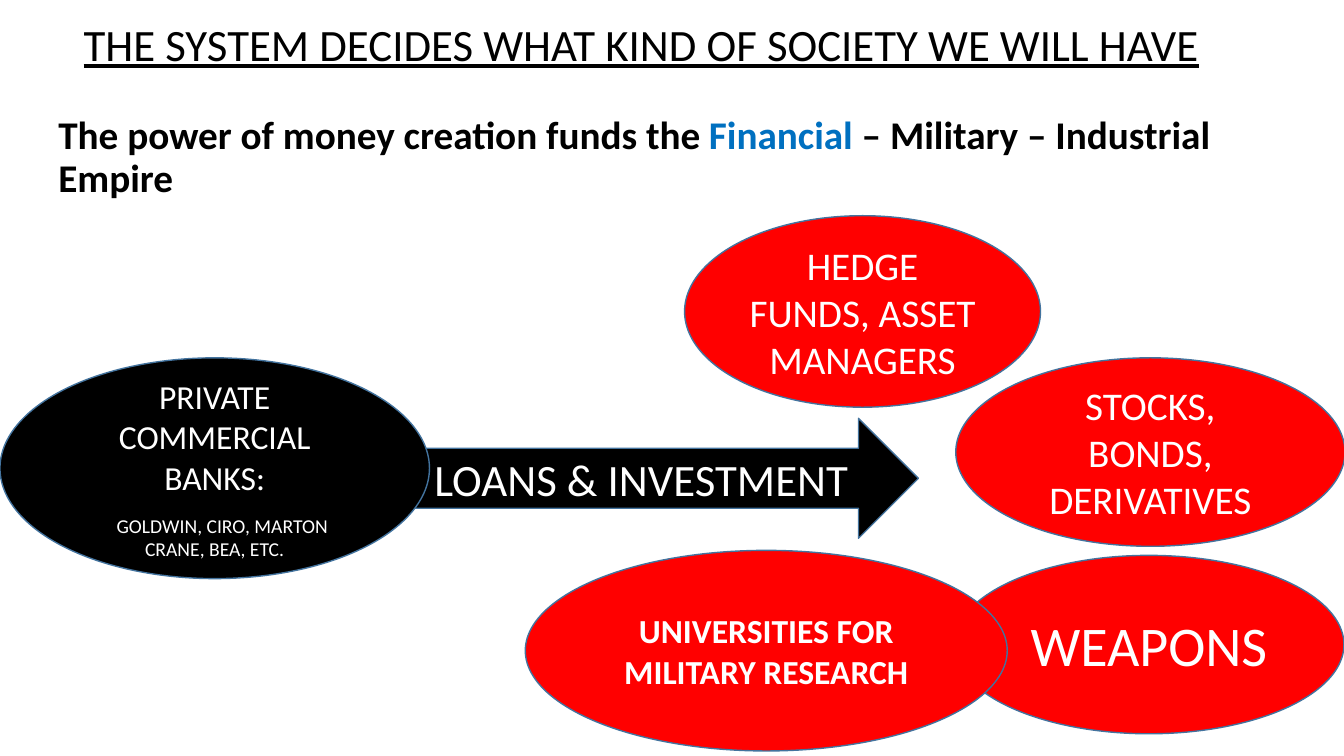
"""Build the slide on how money creation funds the financial-military-industrial empire."""
import pptx
import pptx.dml.color
import pptx.enum.shapes
import pptx.enum.text
import pptx.util

Inches = pptx.util.Inches
Pt = pptx.util.Pt
Shape = pptx.enum.shapes.MSO_SHAPE
Anchor = pptx.enum.text.MSO_ANCHOR
Align = pptx.enum.text.PP_ALIGN


def color(hex_string):
    return pptx.dml.color.RGBColor.from_string(hex_string)


def style(para, size, hex_string, bold=False):
    para.font.name = "Calibri"
    para.font.size = Pt(size)
    para.font.bold = bold
    para.font.color.rgb = color(hex_string)


deck = pptx.Presentation()
deck.slide_width = Inches(13.33)
deck.slide_height = Inches(7.5)
slide = deck.slides.add_slide(deck.slide_layouts[6])

title = slide.shapes.add_textbox(Inches(0.73), Inches(0.12), Inches(11.28), Inches(0.64))
title.text_frame.word_wrap = False
para = title.text_frame.paragraphs[0]
para.text = "THE SYSTEM DECIDES WHAT KIND OF SOCIETY WE WILL HAVE"
style(para, 32, "000000")
para.font.underline = True

subtitle = slide.shapes.add_textbox(Inches(0.48), Inches(1.1), Inches(12.55), Inches(0.64))
subtitle.text_frame.word_wrap = True
para = subtitle.text_frame.paragraphs[0]
para.line_spacing = 0.9
style(para, 28, "000000", bold=True)
for text, tint in [
    ("The power of money creation funds the ", "000000"),
    ("Financial", "0070C0"),
    (" – Military – Industrial Empire", "000000"),
]:
    span = para.add_run()
    span.text = text
    span.font.color.rgb = color(tint)

RED, BLACK = "FF0000", "000000"
nodes = [
    (Shape.OVAL, 6.79, 2.14, 3.53, 1.9, RED, 28, False, ["HEDGE FUNDS, ASSET MANAGERS"]),
    (Shape.OVAL, 9.48, 3.55, 3.86, 1.87, RED, 28, False, ["STOCKS, BONDS, DERIVATIVES"]),
    (Shape.OVAL, 9.46, 5.51, 3.87, 1.77, RED, 40, False, ["WEAPONS"]),
    (Shape.OVAL, 5.21, 5.46, 4.78, 1.99, RED, 24, True, ["UNIVERSITIES FOR", "MILITARY RESEARCH"]),
    (Shape.RIGHT_ARROW, 3.91, 4.15, 5.2, 1.19, BLACK, 32, False, ["LOANS & INVESTMENT"]),
    (Shape.OVAL, 0, 3.55, 4.26, 2.19, BLACK, 24, False,
     ["PRIVATE COMMERCIAL BANKS:", "GOLDWIN, CIRO, MARTON CRANE, BEA, ETC."]),
]
for kind, left, top, width, height, fill, size, bold, lines in nodes:
    node = slide.shapes.add_shape(kind, Inches(left), Inches(top), Inches(width), Inches(height))
    node.shadow.inherit = False
    node.fill.solid()
    node.fill.fore_color.rgb = color(fill)
    node.line.color.rgb = color("43739E")
    node.line.width = Pt(1)
    frame = node.text_frame
    frame.word_wrap = True
    frame.vertical_anchor = Anchor.MIDDLE
    frame.text = "\n".join(lines)
    for para in frame.paragraphs:
        para.alignment = Align.CENTER
        style(para, size, "FFFFFF", bold)

bank_names = frame.paragraphs[1]
bank_names.font.size = Pt(14)
bank_names.space_before = Pt(12)
bank_names._p.get_or_add_pPr().set("indent", str(Inches(0.15)))

deck.save("out.pptx")
